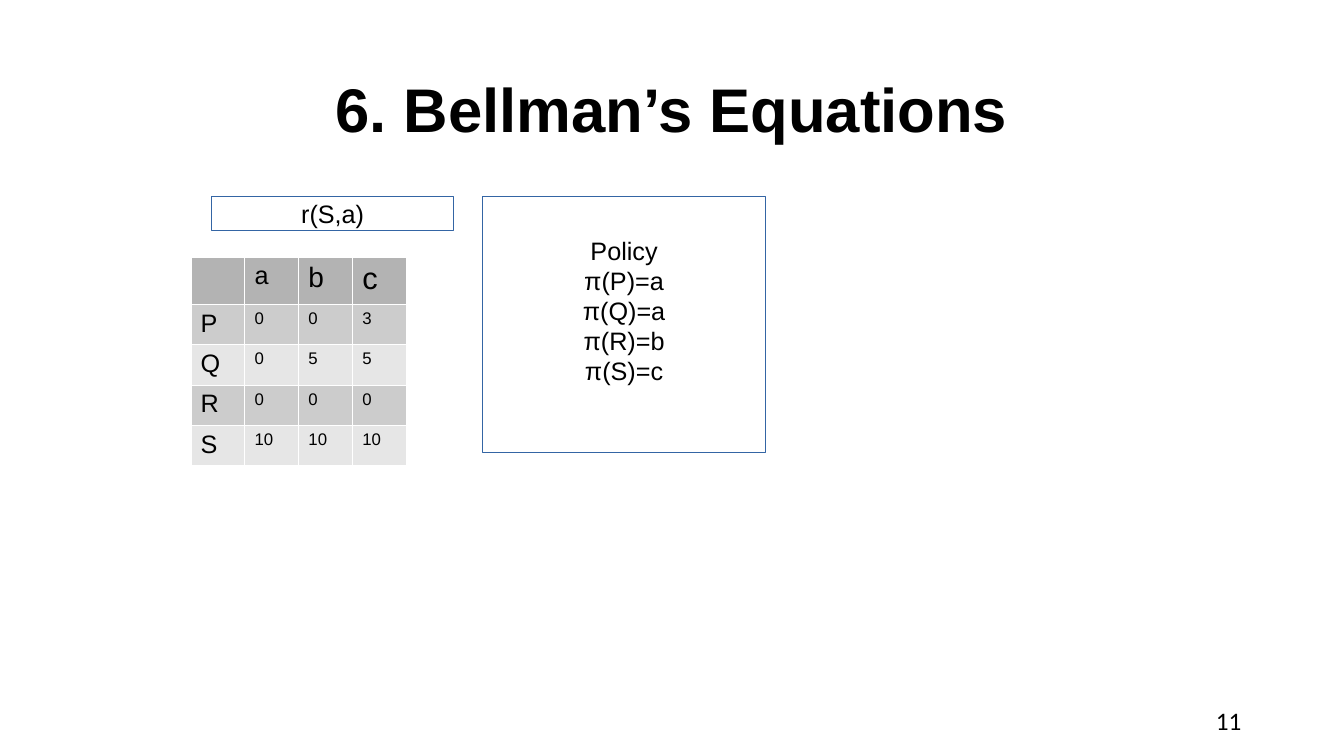
"""Builds the Bellman's Equations slide with a reward table and a policy box."""
from lxml import etree
from pptx import Presentation
from pptx.dml.color import RGBColor
from pptx.enum.shapes import MSO_SHAPE
from pptx.enum.text import MSO_ANCHOR, PP_ALIGN
from pptx.oxml.ns import qn
from pptx.util import Inches, Pt

RECTANGLE = MSO_SHAPE.RECTANGLE
MIDDLE = MSO_ANCHOR.MIDDLE
CENTER, LEFT, RIGHT = PP_ALIGN.CENTER, PP_ALIGN.LEFT, PP_ALIGN.RIGHT
COLORS = {"text": "000000", "paper": "FFFFFF", "outline": "3465A4",
          "header": "B3B3B3", "odd": "CCCCCC", "even": "E6E6E6"}
COLUMN_WIDTH, HEADER_HEIGHT, ROW_HEIGHT = 0.535, 0.44, 0.38
BORDER_WIDTH = Pt(0.06)


def color(name):
    return RGBColor.from_string(COLORS[name])


def write(frame, lines, size, align=CENTER, font="Arial", bold=False):
    for index, line in enumerate(lines):
        paragraph = frame.add_paragraph() if index else frame.paragraphs[0]
        paragraph.alignment = align
        run = paragraph.add_run()
        run.text = line
        run.font.size = Pt(size)
        run.font.name = font
        run.font.bold = bold
        run.font.color.rgb = color("text")


presentation = Presentation()
presentation.slide_width = Inches(13.33)
presentation.slide_height = Inches(7.5)
slide = presentation.slides.add_slide(presentation.slide_layouts[5])

title = slide.shapes.title
title.left, title.top, title.width, title.height = map(Inches, (0.92, 0.4, 11.49, 1.44))
title.text_frame.vertical_anchor = MIDDLE
write(title.text_frame, ["6. Bellman’s Equations"], 44, bold=True)
title.text_frame.paragraphs[0].line_spacing = 0.9

page_number = slide.shapes.add_textbox(*map(Inches, (9.42, 6.95, 2.99, 0.39))).text_frame
page_number.word_wrap = True
page_number.vertical_anchor = MIDDLE
write(page_number, ["11"], 18, RIGHT, "Calibri")

rewards = [["", "a", "b", "c"],
           ["P", "0", "0", "3"],
           ["Q", "0", "5", "5"],
           ["R", "0", "0", "0"],
           ["S", "10", "10", "10"]]
header_sizes = [18, 18, 20, 22]
reward_table = slide.shapes.add_table(
    len(rewards), len(rewards[0]), Inches(1.89), Inches(2.55),
    Inches(COLUMN_WIDTH * len(rewards[0])),
    Inches(HEADER_HEIGHT + ROW_HEIGHT * (len(rewards) - 1))).table
for column in reward_table.columns:
    column.width = Inches(COLUMN_WIDTH)
for r, values in enumerate(rewards):
    reward_table.rows[r].height = Inches(ROW_HEIGHT if r else HEADER_HEIGHT)
    shade = "header" if r == 0 else "odd" if r % 2 else "even"
    for c, value in enumerate(values):
        cell = reward_table.cell(r, c)
        properties = cell._tc.get_or_add_tcPr()
        for side in ("a:lnL", "a:lnR", "a:lnT", "a:lnB"):
            border = etree.SubElement(properties, qn(side), w=str(BORDER_WIDTH))
            border_fill = etree.SubElement(border, qn("a:solidFill"))
            etree.SubElement(border_fill, qn("a:srgbClr"), val=COLORS["paper"])
        cell.fill.solid()
        cell.fill.fore_color.rgb = color(shade)
        if value:
            size = header_sizes[c] if r == 0 else 12 if c else 18
            write(cell.text_frame, [value], size, LEFT)

policy = ["Policy", "π(P)=a", "π(Q)=a", "π(R)=b", "π(S)=c"]
for left, width, height, bottom_margin, lines in [
        (2.1, 2.4, 0.34, 0.05, ["r(S,a)"]),
        (4.79, 2.8, 2.54, 0.33, policy)]:
    box = slide.shapes.add_shape(RECTANGLE, *map(Inches, (left, 1.95, width, height)))
    box.shadow.inherit = False
    box.fill.solid()
    box.fill.fore_color.rgb = color("paper")
    box.line.color.rgb = color("outline")
    box.line.width = Pt(0.75)
    box.text_frame.word_wrap = False
    box.text_frame.vertical_anchor = MIDDLE
    box.text_frame.margin_bottom = Inches(bottom_margin)
    write(box.text_frame, lines, 18)

presentation.save("out.pptx")
